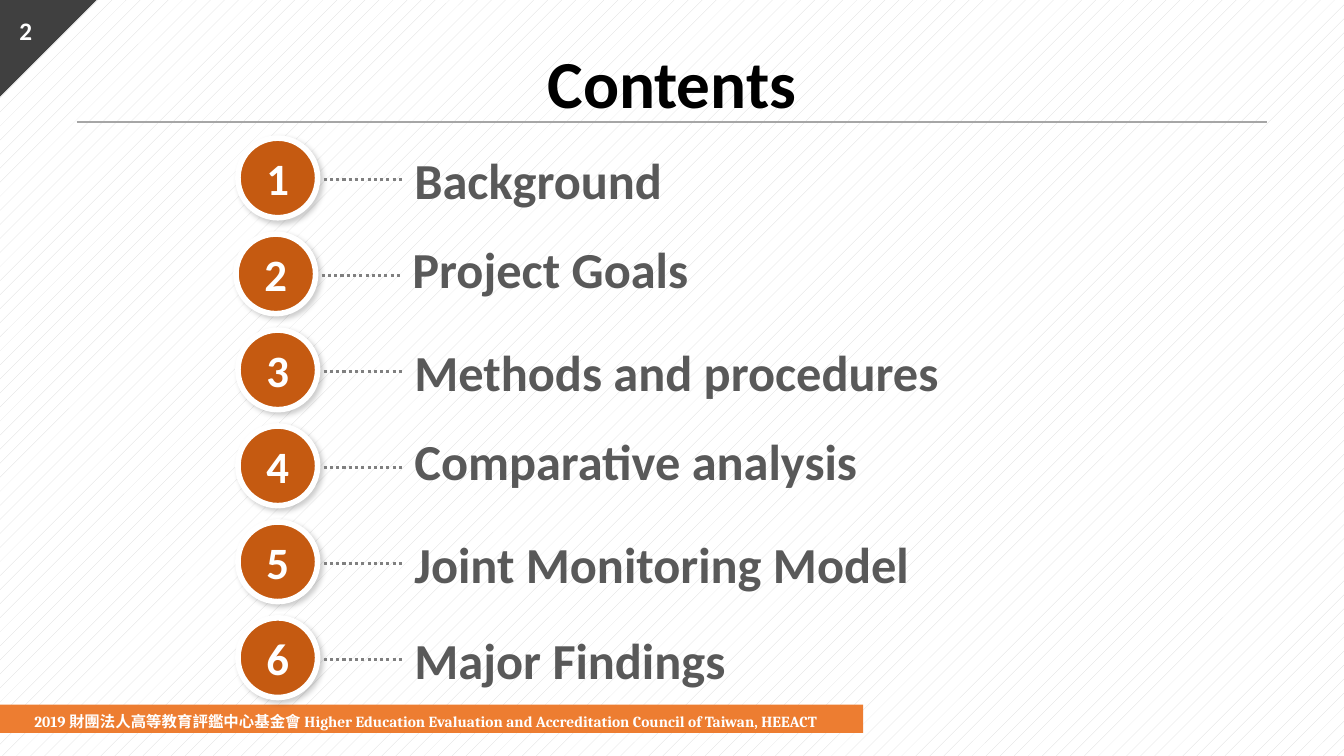
from lxml.etree import SubElement
from pptx import Presentation
from pptx.dml.color import RGBColor
from pptx.enum.dml import MSO_LINE, MSO_PATTERN
from pptx.enum.shapes import MSO_CONNECTOR, MSO_SHAPE
from pptx.enum.text import MSO_ANCHOR, MSO_AUTO_SIZE, PP_ALIGN
from pptx.oxml.ns import qn
from pptx.util import Inches, Pt

# Content
TITLE = "Contents"
PAGE_NUMBER = "2"
FOOTER = ("2019 財團法人高等教育評鑑中心基金會 Higher Education Evaluation "
          "and Accreditation Council of Taiwan, HEEACT")
# label, horizontal shift, label width, label height, exact line spacing
TOPICS = [
    ("Background", 0, 6.89, 0.61, None),
    ("Project Goals", -0.02, 6.89, 0.48, 33),
    ("Methods and procedures", 0, 6.89, 0.61, None),
    ("Comparative analysis", 0, 6.89, 0.48, 33),
    ("Joint Monitoring Model", 0, 5.9, 0.61, None),
    ("Major Findings", 0, 6.89, 0.61, None),
]

# Grid of the topic list
FIRST_TOP, LAST_TOP = 1.37, 6.13
ROW_PITCH = (LAST_TOP - FIRST_TOP) / (len(TOPICS) - 1)
ROW_CENTER = 0.41
BADGE_LEFT, BADGE_SIZE = 2.36, 0.79
DOTS_LEFT, DOTS_RIGHT = 3.21, 4.0
LABEL_LEFT = 4.11

# Text formats
TITLE_FONT = {"name": "Calibri", "size": Pt(48), "bold": True}
BADGE_FONT = {"name": "Calibri", "size": Pt(32), "bold": True}
LABEL_FONT = {"name": "Calibri", "size": Pt(36), "bold": True}
NUMBER_FONT = {"name": "Calibri", "size": Pt(18), "bold": True}
FOOTER_FONT = {"name": "Cambria", "size": Pt(11), "bold": True}


def color(hex_text):
    return RGBColor.from_string(hex_text)


def write(shape, text, font, hex_text, align=PP_ALIGN.LEFT, spacing=None,
          inset=0, wrap=True, fit=MSO_AUTO_SIZE.NONE):
    frame = shape.text_frame
    settings = {"word_wrap": wrap, "auto_size": fit,
                "vertical_anchor": MSO_ANCHOR.MIDDLE,
                "margin_left": Inches(inset), "margin_right": 0,
                "margin_top": 0, "margin_bottom": 0}
    for name, value in settings.items():
        setattr(frame, name, value)
    para = frame.paragraphs[0]
    para.alignment = align
    if spacing:
        para.line_spacing = Pt(spacing)
    span = para.add_run()
    span.text = text
    for name, value in font.items():
        setattr(span.font, name, value)
    span.font.color.rgb = color(hex_text)
    return span


def add_box(page, *place):
    return page.shapes.add_textbox(*map(Inches, place))


def add_solid(page, kind, fill, *place):
    shape = page.shapes.add_shape(kind, *map(Inches, place))
    shape.shadow.inherit = False
    shape.fill.solid()
    shape.fill.fore_color.rgb = color(fill)
    shape.line.fill.background()
    return shape


def add_rule(page, left, right, y, hex_text, width, dash=None):
    rule = page.shapes.add_connector(
        MSO_CONNECTOR.STRAIGHT, *map(Inches, (left, y, right, y)))
    rule.line.color.rgb = color(hex_text)
    rule.line.width = Pt(width)
    if dash:
        rule.line.dash_style = dash
    SubElement(rule._element.spPr, qn("a:effectLst"))


def add_badge(page, left, top, number):
    badge = add_solid(page, MSO_SHAPE.OVAL, "C55A11",
                      left, top, BADGE_SIZE, BADGE_SIZE)
    badge.line.color.rgb = color("FFFFFF")
    badge.line.width = Pt(4)
    effects = badge._element.spPr.find(qn("a:effectLst"))
    shadow = SubElement(effects, qn("a:outerShdw"), blurRad=str(Pt(4)),
                        dist=str(Pt(3)), dir=str(45 * 60000), algn="tl",
                        rotWithShape="0")
    tint = SubElement(shadow, qn("a:srgbClr"), val="000000")
    SubElement(tint, qn("a:alpha"), val="20000")
    write(badge, str(number), BADGE_FONT, "FFFFFF", PP_ALIGN.CENTER)


def main():
    deck = Presentation()
    deck.slide_width, deck.slide_height = Inches(13.33), Inches(7.5)
    page = deck.slides.add_slide(deck.slide_layouts[5])

    # Patterned background
    backdrop = page.background.fill
    backdrop.patterned()
    backdrop.pattern = MSO_PATTERN.PERCENT_5
    backdrop.fore_color.rgb = color("D9D9D9")
    backdrop.back_color.rgb = color("FFFFFF")

    # Title and the rule below it
    title = page.shapes.title
    title.left, title.top, title.width, title.height = map(
        Inches, (2.08, 0.41, 9.17, 0.81))
    write(title, TITLE, TITLE_FONT, "000000", PP_ALIGN.CENTER)
    add_rule(page, 0.76, 12.57, 1.21, "A6A6A6", 1)

    # Corner with the page number
    corner = add_solid(page, MSO_SHAPE.RIGHT_TRIANGLE, "404040",
                       0, 0, 0.96, 0.96)
    corner.rotation = 90
    write(add_box(page, -0.02, 0.1, 0.55, 0.4), PAGE_NUMBER, NUMBER_FONT,
          "FFFFFF", PP_ALIGN.CENTER)

    # Footer band
    add_solid(page, MSO_SHAPE.RECTANGLE, "ED7D31", -0.02, 6.99, 8.58, 0.28)
    span = write(add_box(page, 0.19, 6.99, 8.37, 0.26), FOOTER, FOOTER_FONT,
                 "FFFFFF", spacing=18, inset=0.15, wrap=False)
    SubElement(span.font._element, qn("a:ea"), typeface="Noto Sans CJK SC")

    # Topics: badge, dotted leader, label
    for row, (label, shift, width, height, spacing) in enumerate(TOPICS):
        top = FIRST_TOP + row * ROW_PITCH
        center = top + ROW_CENTER
        add_badge(page, BADGE_LEFT + shift, top, row + 1)
        add_rule(page, DOTS_LEFT + shift, DOTS_RIGHT + shift, center,
                 "808080", 2.25, MSO_LINE.ROUND_DOT)
        box = add_box(page, LABEL_LEFT + shift, center - height / 2,
                      width, height)
        write(box, label, LABEL_FONT, "595959", spacing=spacing,
              fit=MSO_AUTO_SIZE.SHAPE_TO_FIT_TEXT)

    deck.save("out.pptx")


if __name__ == "__main__":
    main()
